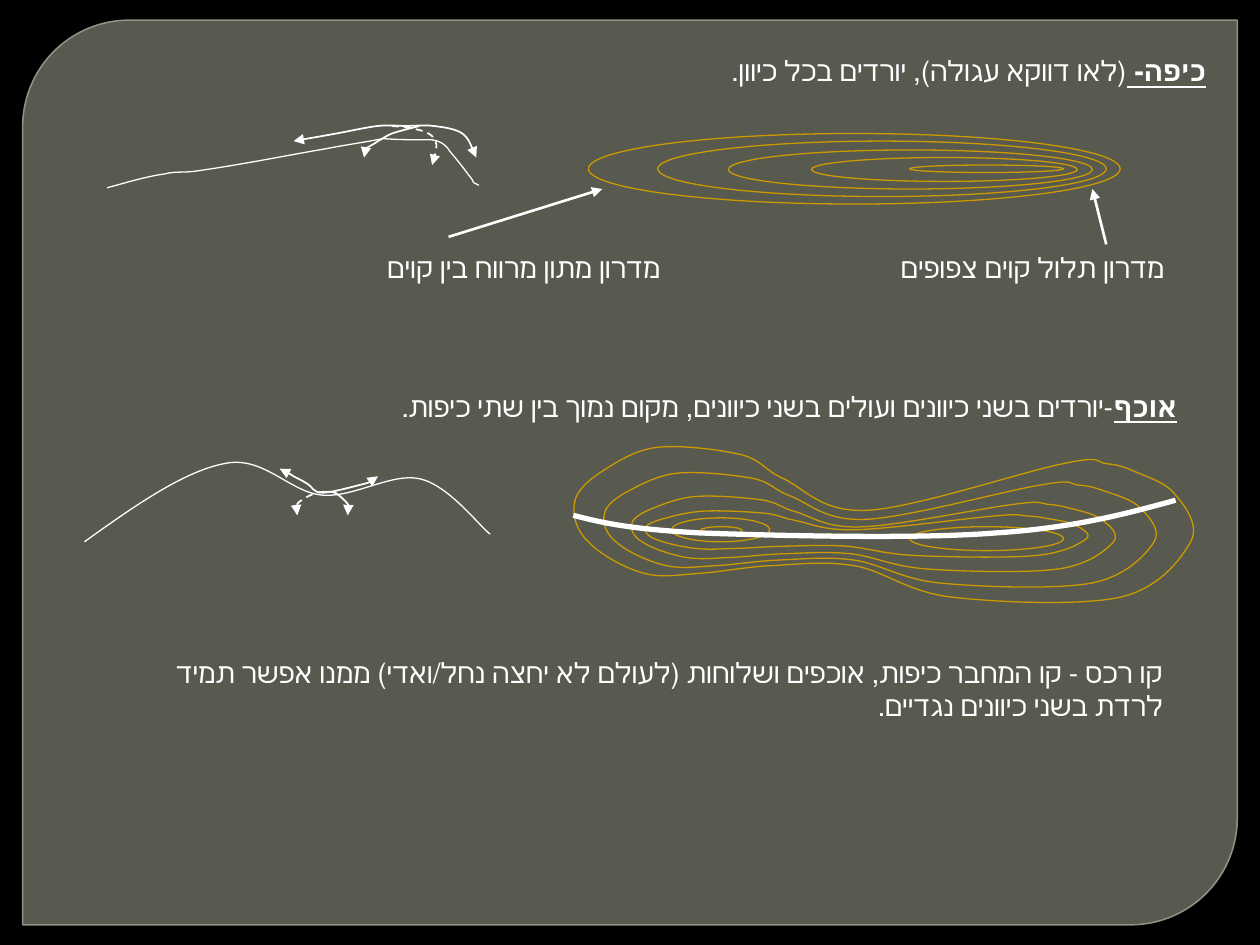
from lxml import etree
from pptx import Presentation
from pptx.dml.color import RGBColor
from pptx.enum.dml import MSO_LINE
from pptx.enum.shapes import MSO_CONNECTOR, MSO_SHAPE
from pptx.enum.text import MSO_AUTO_SIZE, PP_ALIGN
from pptx.oxml.ns import qn
from pptx.util import Inches, Pt

STRAIGHT = MSO_CONNECTOR.STRAIGHT
ELLIPSE = MSO_SHAPE.OVAL
PANEL = MSO_SHAPE.ROUND_2_DIAG_RECTANGLE
DASH = MSO_LINE.DASH
RIGHT = PP_ALIGN.RIGHT
GROW = MSO_AUTO_SIZE.SHAPE_TO_FIT_TEXT

COLORS = {"back": "000000", "panel": "888B7B", "edge": "9DA090",
          "white": "FFFFFF", "contour": "CC9900"}
SLAB, TIMES = "Roboto Slab", "Times New Roman"

DOME_CONTOURS = [(4.67, 1.06, 4.22, 0.56), (5.22, 1.12, 3.56, 0.44),
                 (5.78, 1.19, 2.89, 0.31), (6.44, 1.25, 2.11, 0.19),
                 (7.22, 1.31, 1.22, 0.06)]
SADDLE_PEAKS = [(7.22, 4.18, 1.22, 0.19), (5.33, 4.11, 0.78, 0.19),
                (5.56, 4.18, 0.33, 0.06)]
SADDLE_BOXES = [(4.54, 3.53, 4.98, 1.28), (4.78, 3.74, 4.44, 0.94),
                (5, 3.93, 3.89, 0.62), (5.11, 4.05, 3.56, 0.38)]
SADDLE_OUTLINE = [
    (8.44, 3.68), (8.13, 3.74), (7.26, 4.03), (6.89, 4.05),
    (6.52, 4.07), (6.39, 3.88), (6.22, 3.8), (6.06, 3.73), (6.06, 3.66), (5.89, 3.61),
    (5.72, 3.57), (5.41, 3.53), (5.22, 3.55), (5.04, 3.57), (4.89, 3.67), (4.78, 3.74),
    (4.67, 3.81), (4.57, 3.9), (4.56, 3.99), (4.54, 4.08), (4.57, 4.21), (4.67, 4.3),
    (4.76, 4.4), (4.96, 4.51), (5.11, 4.55), (5.26, 4.59), (5.39, 4.56), (5.56, 4.55),
    (5.72, 4.54), (5.91, 4.5), (6.11, 4.49), (6.32, 4.48), (6.54, 4.45), (6.78, 4.49),
    (7.02, 4.53), (7.2, 4.7), (7.56, 4.74), (7.91, 4.78), (8.57, 4.81), (8.89, 4.74),
    (9.2, 4.67), (9.37, 4.44), (9.45, 4.3), (9.52, 4.17), (9.41, 4.02), (9.33, 3.93),
    (9.26, 3.83), (9.09, 3.78), (9, 3.74), (8.91, 3.7), (8.87, 3.69), (8.78, 3.68),
    (8.69, 3.67), (8.76, 3.61), (8.44, 3.68)]
DOME_PROFILE = [
    (0.85, 1.49), (1, 1.45), (1.16, 1.4), (1.31, 1.38), (1.38, 1.36), (1.46, 1.37),
    (1.54, 1.36), (1.9, 1.31), (2.24, 1.24), (2.59, 1.18), (2.74, 1.15), (2.89, 1.13),
    (3.04, 1.1), (3.17, 1.11), (3.3, 1.11), (3.43, 1.11), (3.5, 1.12), (3.55, 1.16),
    (3.57, 1.2), (3.62, 1.26), (3.67, 1.32), (3.72, 1.39), (3.79, 1.47), (3.72, 1.43),
    (3.8, 1.47)]
SADDLE_PROFILE = [
    (0.67, 4.3), (1.06, 4.02), (1.46, 3.74), (1.78, 3.68), (2.09, 3.61), (2.3, 3.91),
    (2.56, 3.93), (2.81, 3.95), (3.11, 3.75), (3.33, 3.8), (3.56, 3.85), (3.8, 4.17),
    (3.89, 4.24)]
RIDGE = [(4.55, 4.09), (4.78, 4.15), (5, 4.2), (5.56, 4.23), (6.12, 4.25),
         (7.27, 4.28), (7.9, 4.23), (8.52, 4.19), (8.93, 4.08), (9.33, 3.97)]
SADDLE_RISE = [
    (2.22, 3.72), (2.26, 3.74), (2.3, 3.76), (2.33, 3.78), (2.37, 3.8), (2.41, 3.82),
    (2.44, 3.84), (2.48, 3.86), (2.48, 3.91), (2.56, 3.91), (2.63, 3.91), (2.81, 3.86),
    (2.89, 3.84), (2.96, 3.82), (2.98, 3.8), (3, 3.78)]
SADDLE_FRONT = [(2.56, 3.91), (2.59, 3.9), (2.62, 3.9), (2.66, 3.91),
                (2.69, 3.93), (2.74, 3.97), (2.76, 4), (2.78, 4.03), (2.76, 4.08), (2.76, 4.09)]
SADDLE_BEHIND = [(2.67, 3.91), (2.62, 3.9), (2.56, 3.9), (2.51, 3.91),
                 (2.46, 3.93), (2.38, 3.97), (2.36, 4), (2.33, 4.03), (2.35, 4.06), (2.36, 4.09)]
DOME_SIDES = [
    (3.78, 1.25), (3.75, 1.18), (3.72, 1.1), (3.67, 1.06), (3.61, 1.02), (3.52, 1.01),
    (3.44, 1), (3.37, 0.99), (3.3, 1), (3.22, 1), (3.15, 1), (3.09, 0.99), (3, 1),
    (2.91, 1.01), (2.78, 1.04), (2.67, 1.06), (2.56, 1.08), (2.44, 1.1), (2.33, 1.12)]
DOME_FRONT = [
    (3.33, 1), (3.25, 1.02), (3.17, 1.04), (3.11, 1.06), (3.06, 1.08), (3.04, 1.1),
    (3, 1.12), (2.96, 1.15), (2.91, 1.17), (2.89, 1.19), (2.87, 1.21), (2.88, 1.23),
    (2.89, 1.25)]
DOME_BEHIND = [(3.11, 1), (3.24, 1.01), (3.38, 1.03), (3.43, 1.08),
               (3.48, 1.13), (3.46, 1.22), (3.43, 1.31)]


def rgb(name):
    """Return the named palette colour."""
    return RGBColor.from_string(COLORS[name])


def style_line(line, color, width, ends=(), dash=None):
    """Set colour, width, dash and arrowheads of a line."""
    line.color.rgb = rgb(color)
    line.width = Pt(width)
    if dash:
        line.dash_style = dash
    for end in ends:
        etree.SubElement(line._get_or_add_ln(), qn(f"a:{end}End"), type="triangle")


def set_alpha(properties, percent):
    """Make the solid colour inside the given properties translucent."""
    color = properties.find(qn("a:solidFill"))[0]
    etree.SubElement(color, qn("a:alpha"), val=str(percent * 1000))


def add_panel(shapes):
    """Add the translucent panel with two rounded corners."""
    panel = shapes.add_shape(PANEL, *map(Inches, (0.18, 0.16, 9.64, 7.18)))
    panel.adjustments[0], panel.adjustments[1] = 0.118, 0
    panel.shadow.inherit = False
    panel.fill.solid()
    panel.fill.fore_color.rgb = rgb("panel")
    style_line(panel.line, "edge", 0.87)
    set_alpha(panel._element.spPr, 65)
    set_alpha(panel.line._get_or_add_ln(), 88)


def add_note(shapes, box, font, body, term="", stops=()):
    """Add right-to-left text, with an optional underlined term before it."""
    frame = shapes.add_textbox(*map(Inches, box)).text_frame
    frame.word_wrap = True
    frame.auto_size = GROW
    paragraph = frame.paragraphs[0]
    paragraph.alignment = RIGHT
    properties = paragraph._p.get_or_add_pPr()
    properties.set("rtl", "1")
    if stops:
        tabs = etree.SubElement(properties, qn("a:tabLst"))
        for stop in stops:
            etree.SubElement(tabs, qn("a:tab"), pos=str(Inches(stop)), algn="l")
    for words, strong in ((term, True), (body, False)):
        if words:
            run = paragraph.add_run()
            run.text = words
            run.font.name, run.font.size = font, Pt(16)
            run.font.bold = run.font.underline = strong
            run.font.color.rgb = rgb("white")


def add_ellipse(shapes, box):
    """Add an oval contour line."""
    contour = shapes.add_shape(ELLIPSE, *map(Inches, box))
    contour.shadow.inherit = False
    contour.fill.background()
    style_line(contour.line, "contour", 0.75)


def add_curve(shapes, points, color="white", width=0.75, ends=(), dash=None):
    """Add a Bezier curve: a start, then two controls and an end per piece."""
    start, *rest = [(Inches(x), Inches(y)) for x, y in points]
    builder = shapes.build_freeform(*start)
    builder.add_line_segments(rest, close=points[0] == points[-1])
    curve = builder.convert_to_shape()
    steps = list(curve._element.iter(qn("a:lnTo")))
    for first in range(0, len(steps), 3):
        bezier = etree.Element(qn("a:cubicBezTo"))
        steps[first].addprevious(bezier)
        for step in steps[first:first + 3]:
            bezier.append(step[0])
            step.getparent().remove(step)
    curve.shadow.inherit = False
    curve.fill.background()
    style_line(curve.line, color, width, ends, dash)


def add_pointer(shapes, start, end):
    """Add a straight arrow from a label to its slope."""
    pointer = shapes.add_connector(STRAIGHT, *map(Inches, start + end))
    style_line(pointer.line, "white", 1.5, ["tail"])
    etree.SubElement(pointer._element.spPr, qn("a:effectLst"))


def fit_outline(box):
    """Scale the saddle outline into a box."""
    left, top, width, height = SADDLE_BOXES[0]
    x, y, w, h = box
    return [(x + (px - left) * w / width, y + (py - top) * h / height)
            for px, py in SADDLE_OUTLINE]


def main():
    """Build and save the slide on domes and saddles."""
    deck = Presentation()
    deck.slide_width, deck.slide_height = Inches(10), Inches(7.5)
    slide = deck.slides.add_slide(deck.slide_layouts[6])
    slide.background.fill.solid()
    slide.background.fill.fore_color.rgb = rgb("back")
    shapes = slide.shapes
    add_panel(shapes)

    dome = shapes.add_group_shape().shapes
    add_note(dome, (0.67, 0.38, 9, 0.37), SLAB,
             "(לאו דווקא עגולה), יורדים בכל כיוון.", "כיפה- ")
    add_curve(dome, DOME_PROFILE)
    for box in DOME_CONTOURS:
        add_ellipse(dome, box)
    add_note(shapes, (0.78, 1.94, 8.56, 0.37), SLAB,
             "מדרון תלול קוים צפופים\t\t\tמדרון מתון מרווח בין קוים", stops=(3, 4, 5))
    add_pointer(shapes, (8.78, 1.94), (8.67, 1.5))
    add_pointer(shapes, (3.56, 1.88), (4.78, 1.5))

    add_note(shapes, (1, 3.04, 8.44, 0.37), TIMES,
             "-יורדים בשני כיוונים ועולים בשני כיוונים, מקום נמוך בין שתי כיפות.", "אוכף")
    saddle = shapes.add_group_shape().shapes
    add_curve(saddle, SADDLE_PROFILE)
    for box in SADDLE_BOXES:
        add_curve(saddle, fit_outline(box), "contour")
    for box in SADDLE_PEAKS:
        add_ellipse(saddle, box)
    add_curve(shapes, RIDGE, width=3)
    add_note(shapes, (1.11, 5.15, 8.22, 0.64), TIMES,
             "קו רכס - קו המחבר כיפות, אוכפים ושלוחות (לעולם לא יחצה נחל/ואדי) "
             "ממנו אפשר תמיד לרדת בשני כיוונים נגדיים.")

    add_curve(shapes, SADDLE_RISE, width=1, ends=["head", "tail"])
    descents = shapes.add_group_shape().shapes
    add_curve(descents, SADDLE_FRONT, width=1, ends=["tail"])
    add_curve(descents, SADDLE_BEHIND, width=1, ends=["tail"], dash=DASH)
    slopes = shapes.add_group_shape().shapes
    add_curve(slopes, DOME_SIDES, width=1, ends=["head", "tail"])
    add_curve(slopes, DOME_FRONT, width=1, ends=["tail"])
    add_curve(slopes, DOME_BEHIND, width=1, ends=["tail"], dash=DASH)
    deck.save("out.pptx")


if __name__ == "__main__":
    main()
